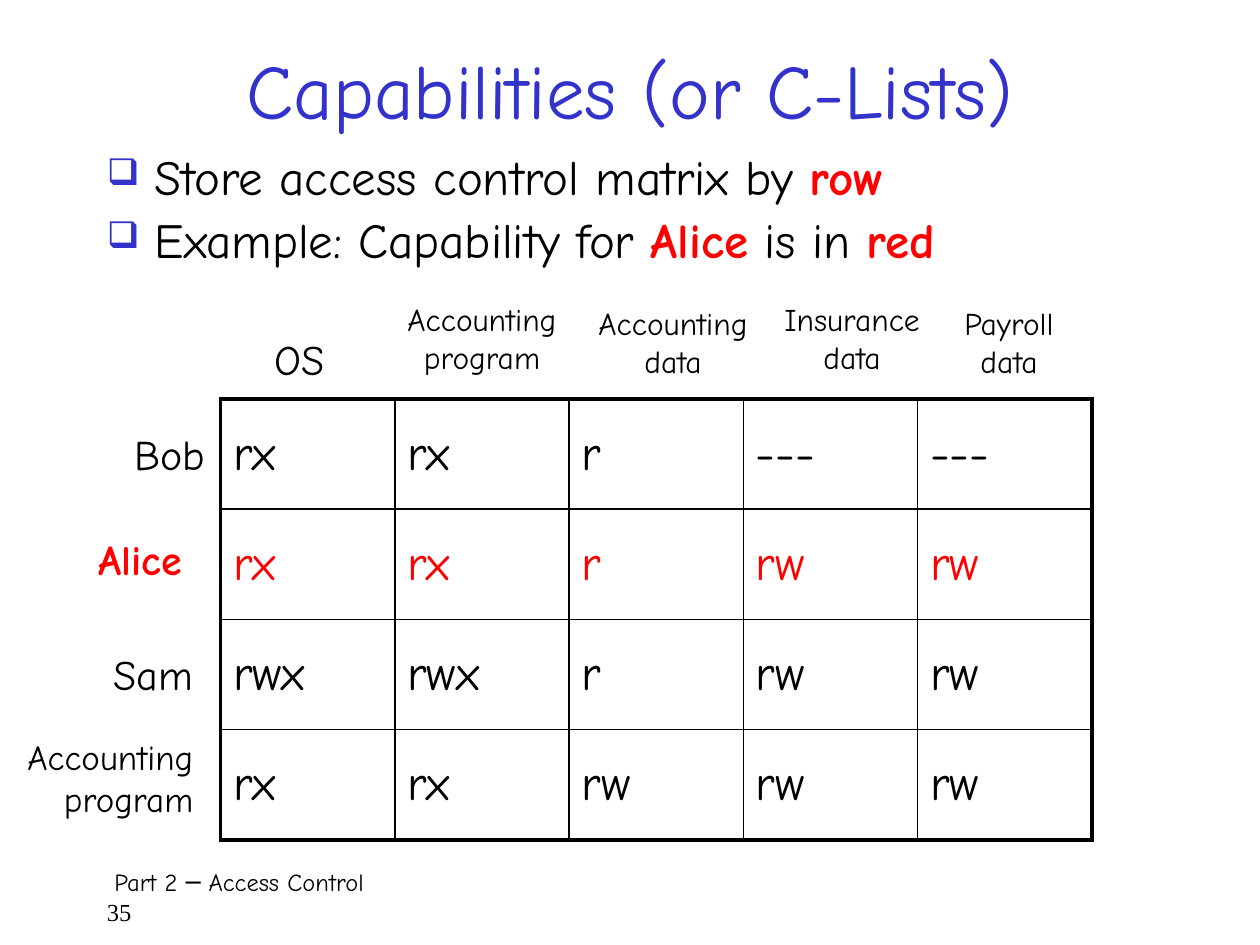
from lxml.etree import SubElement
from pptx import Presentation
from pptx.dml.color import RGBColor
from pptx.enum.text import MSO_ANCHOR as Anchor, MSO_AUTO_SIZE as Fit, PP_ALIGN as Align
from pptx.oxml.ns import qn
from pptx.util import Inches, Pt

COLORS = {"ink": "000000", "title": "3333CC", "accent": "FF0000"}
FACE = "Comic Neue"
UNIT = Inches(1) / 12
SLIDE_COLS, SLIDE_ROWS = 120, 90

RIGHTS = [
    ["rx", "rx", "r", "---", "---"],
    ["rx", "rx", "r", "rw", "rw"],
    ["rwx", "rwx", "r", "rw", "rw"],
    ["rx", "rx", "rw", "rw", "rw"],
]
ALICE_ROW = 1

OBJECTS = [
    (["OS"], 24, (4, -6.8, 8.4, 6.8)),
    (["Accounting", "program"], 18, (16, -10, 17.8, 9.6)),
    (["Accounting", "data"], 18, (34.2, -9.6, 17.8, 9.6)),
    (["Insurance", "data"], 18, (52, -10, 16.3, 9.6)),
    (["Payroll", "data"], 18, (69.2, -9.6, 11.8, 9.6)),
]
SUBJECTS = [
    (["Bob"], 24, (-9.4, 2.2, 9.4, 6.8)),
    (["Alice"], 24, (-12.8, 12.2, 11.9, 6.8)),
    (["Sam"], 24, (-11.4, 23.2, 10.3, 6.8)),
    (["Accounting", "program"], 20, (-21, 31.5, 19.6, 10.6)),
]
POINTS = [
    [("Store access control matrix by ", "ink"), ("row", "accent")],
    [("Example: Capability for ", "ink"), ("Alice", "accent"),
     (" is in ", "ink"), ("red", "accent")],
]


def grid(count):
    """Turn a number of grid units into a length."""
    return round(count * UNIT)


def apply(target, values):
    """Set each named attribute on the target."""
    for name, value in values.items():
        setattr(target, name, value)


def write(paragraph, text, size, color="ink", bold=False, face=FACE):
    """Append one formatted run to a paragraph."""
    run = paragraph.add_run()
    run.text = text
    apply(run.font, {"size": Pt(size), "name": face, "bold": bold})
    run.font.color.rgb = RGBColor.from_string(COLORS[color])


def text_frame(slide, box, **frame_format):
    """Add a text box on the grid and return its frame."""
    frame = slide.shapes.add_textbox(*map(grid, box)).text_frame
    apply(frame, {"word_wrap": True, **frame_format})
    return frame


def paragraphs(frame, count):
    """Give a frame the wanted number of paragraphs."""
    for _ in range(count - 1):
        frame.add_paragraph()
    return frame.paragraphs


def draw_title(slide, box):
    """Place the centred title."""
    title = text_frame(slide, box, vertical_anchor=Anchor.MIDDLE).paragraphs[0]
    title.alignment = Align.CENTER
    write(title, "Capabilities (or C-Lists)", 44, "title")


def add_bullet(paragraph):
    """Give a paragraph the hanging square bullet."""
    props = paragraph._p.get_or_add_pPr()
    props.set("marL", str(Inches(0.38)))
    props.set("indent", str(-Inches(0.38)))
    tint = SubElement(props, qn("a:buClr"))
    SubElement(tint, qn("a:srgbClr"), val=COLORS["title"])
    SubElement(props, qn("a:buSzPct"), val="75000")
    SubElement(props, qn("a:buChar"), char="❑")


def draw_points(slide, box):
    """Place the bulleted points with bold accents."""
    frame = text_frame(slide, box)
    for paragraph, parts in zip(paragraphs(frame, len(POINTS)), POINTS):
        apply(paragraph, {"line_spacing": 0.9, "space_before": Pt(5.6)})
        add_bullet(paragraph)
        for text, color in parts:
            write(paragraph, text, 28, color, bold=color == "accent")


def add_borders(cell, edges):
    """Rule a cell, with a heavy line on each outer edge."""
    props = cell._tc.get_or_add_tcPr()
    for side, outer in edges.items():
        line = SubElement(props, qn(f"a:ln{side}"), w=str(Pt(2.25 if outer else 1)))
        fill = SubElement(line, qn("a:solidFill"))
        SubElement(fill, qn("a:srgbClr"), val=COLORS["ink"])


def draw_matrix(slide, box):
    """Place the access control matrix."""
    rows, cols = len(RIGHTS), len(RIGHTS[0])
    table = slide.shapes.add_table(rows, cols, *map(grid, box)).table
    apply(table, {"first_row": False, "horz_banding": False})
    for column in table.columns:
        column.width = grid(box[2] / cols)
    for r, rights in enumerate(RIGHTS):
        table.rows[r].height = grid(box[3] / rows)
        for c, right in enumerate(rights):
            cell = table.cell(r, c)
            cell.vertical_anchor = Anchor.MIDDLE
            add_borders(cell, {"L": c == 0, "R": c == cols - 1,
                               "T": r == 0, "B": r == rows - 1})
            cell.fill.background()
            entry = cell.text_frame.paragraphs[0]
            entry.space_before = Pt(5.6)
            write(entry, right, 28, "accent" if r == ALICE_ROW else "ink")


def draw_labels(slide, box, labels, alignment):
    """Place matrix labels at offsets from the matrix corner."""
    for lines, size, (dx, dy, width, height) in labels:
        place = (box[0] + dx, box[1] + dy, width, height)
        frame = text_frame(slide, place, word_wrap=False, auto_size=Fit.SHAPE_TO_FIT_TEXT)
        is_alice = lines == ["Alice"]
        for paragraph, line in zip(paragraphs(frame, len(lines)), lines):
            if len(lines) > 1:
                paragraph.alignment = alignment
            write(paragraph, line, size, "accent" if is_alice else "ink", is_alice)


def draw_footer(slide, box):
    """Place the part name with the page number below it."""
    part, page = paragraphs(text_frame(slide, box), 2)
    part._p.get_or_add_pPr().set("marL", str(Inches(0.06)))
    write(part, "Part 2 ─ Access Control", 14)
    write(page, "35", 14, face="Times New Roman")


def main():
    """Build and save the slide."""
    deck = Presentation()
    apply(deck, {"slide_width": grid(SLIDE_COLS), "slide_height": grid(SLIDE_ROWS)})
    slide = deck.slides.add_slide(deck.slide_layouts[6])
    matrix = (21, 38, 83, 42)
    draw_footer(slide, (9, 82, 103, 6))
    draw_title(slide, (9, 2, 102, 13))
    draw_points(slide, (9, 14, 102, 15))
    draw_matrix(slide, matrix)
    draw_labels(slide, matrix, OBJECTS, Align.CENTER)
    draw_labels(slide, matrix, SUBJECTS, Align.RIGHT)
    deck.save("out.pptx")


if __name__ == "__main__":
    main()
